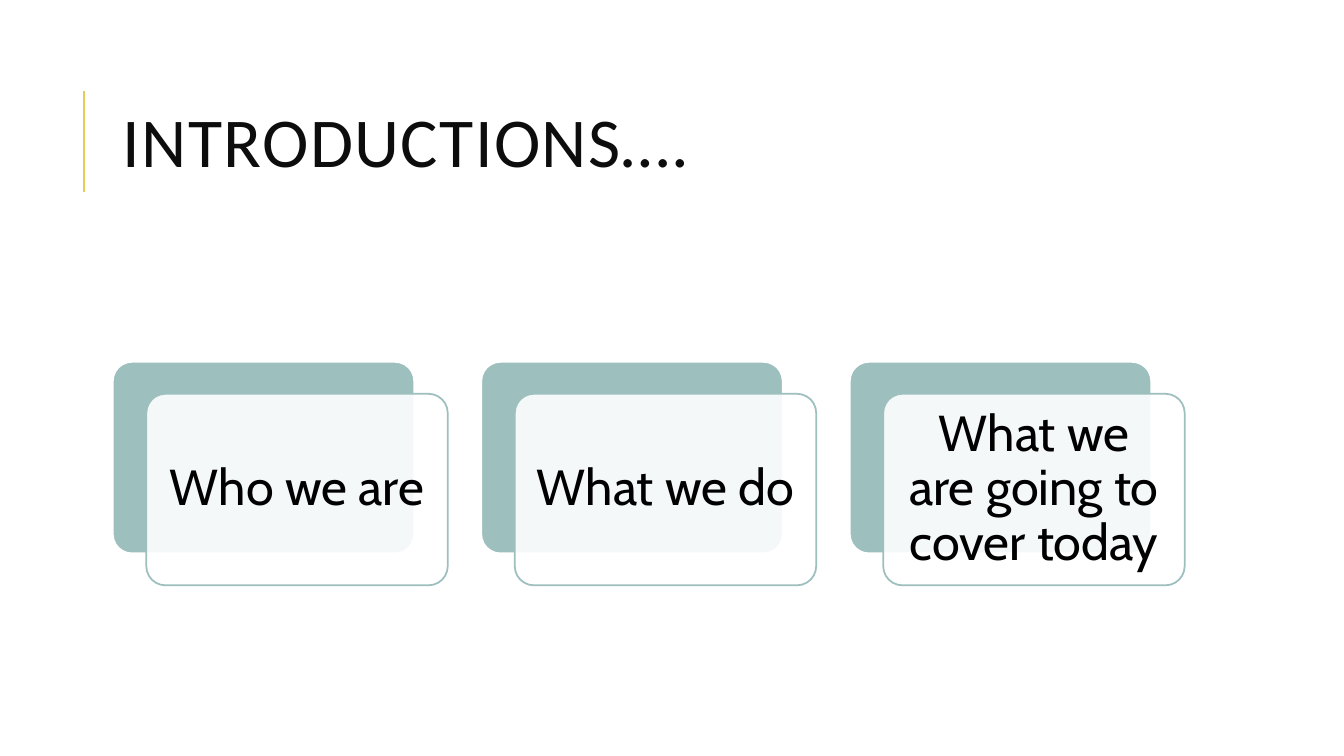
from dataclasses import dataclass

from lxml.etree import SubElement
from pptx import Presentation
from pptx.dml.color import RGBColor
from pptx.enum.shapes import MSO_CONNECTOR, MSO_SHAPE
from pptx.enum.text import MSO_ANCHOR, PP_ALIGN
from pptx.oxml.ns import qn
from pptx.shapes.autoshape import Shape
from pptx.slide import Slide
from pptx.util import Pt


@dataclass(frozen=True)
class Theme:
    white: RGBColor = RGBColor(0xFF, 0xFF, 0xFF)
    black: RGBColor = RGBColor(0x00, 0x00, 0x00)
    title_color: RGBColor = RGBColor(0x0D, 0x0D, 0x0D)
    gold: RGBColor = RGBColor(0xE3, 0xCC, 0x5A)
    teal: RGBColor = RGBColor(0x9D, 0xBF, 0xBE)
    title_font: str = "Calibri"
    card_font: str = "Cabin"
    title_size: float = 50
    card_size: float = 36


@dataclass(frozen=True)
class Card:
    text: str
    left: float


THEME = Theme()
CARD_TOP = 258.5
CARD_WIDTH = 215.3
CARD_HEIGHT = 136.8
FRONT_SHIFT_X = 23.9
FRONT_SHIFT_Y = 22.8
FIRST_LEFT = 80.6
CARD_STEP = 263.2
TOPICS = ("Who we are", "What we do", "What we are going to cover today")
CARDS = [Card(text, FIRST_LEFT + index * CARD_STEP) for index, text in enumerate(TOPICS)]


def write_text(shape: Shape, text: str, font_name: str, size: float,
               color: RGBColor, alignment: PP_ALIGN, line_spacing: float,
               letter_spacing: float = 0) -> None:
    frame = shape.text_frame
    frame.word_wrap = True
    frame.vertical_anchor = MSO_ANCHOR.MIDDLE
    paragraph = frame.paragraphs[0]
    paragraph.alignment = alignment
    paragraph.line_spacing = line_spacing
    run = paragraph.add_run()
    run.text = text
    run.font.name = font_name
    run.font.size = Pt(size)
    run.font.color.rgb = color
    if letter_spacing:
        run.font._element.set("spc", str(round(letter_spacing * 100)))


def add_title(slide: Slide) -> None:
    rule = slide.shapes.add_connector(
        MSO_CONNECTOR.STRAIGHT, Pt(60), Pt(136.8), Pt(60), Pt(64.8))
    rule.line.color.rgb = THEME.gold
    rule.line.width = Pt(1.5)
    SubElement(rule._element.spPr, qn("a:effectLst"))
    title = slide.shapes.add_textbox(Pt(80.6), Pt(46.1), Pt(765.4), Pt(118.1))
    write_text(title, "INTRODUCTIONS….", THEME.title_font, THEME.title_size,
               THEME.title_color, PP_ALIGN.LEFT, 0.8, letter_spacing=1)


def add_panel(slide: Slide, left: float, top: float,
              fill: RGBColor, outline: RGBColor) -> Shape:
    panel = slide.shapes.add_shape(
        MSO_SHAPE.ROUNDED_RECTANGLE, Pt(left), Pt(top), Pt(CARD_WIDTH), Pt(CARD_HEIGHT))
    panel.adjustments[0] = 0.1
    panel.shadow.inherit = False
    panel.fill.solid()
    panel.fill.fore_color.rgb = fill
    panel.line.color.rgb = outline
    panel.line.width = Pt(1.25)
    return panel


def set_opacity(shape: Shape, percent: int) -> None:
    color = shape._element.spPr.find(qn("a:solidFill")).find(qn("a:srgbClr"))
    SubElement(color, qn("a:alpha")).set("val", str(percent * 1000))


def add_card(slide: Slide, card: Card) -> None:
    """Draw a teal panel with a translucent captioned panel shifted over it."""
    add_panel(slide, card.left, CARD_TOP, THEME.teal, THEME.white)
    front = add_panel(slide, card.left + FRONT_SHIFT_X, CARD_TOP + FRONT_SHIFT_Y,
                      THEME.white, THEME.teal)
    set_opacity(front, 90)
    frame = front.text_frame
    frame.margin_left = frame.margin_right = Pt(10.8)
    frame.margin_top = frame.margin_bottom = Pt(10.8)
    write_text(front, card.text, THEME.card_font, THEME.card_size,
               THEME.black, PP_ALIGN.CENTER, 0.9)


def main() -> None:
    presentation = Presentation()
    presentation.slide_width = Pt(960)
    presentation.slide_height = Pt(540)
    slide = presentation.slides.add_slide(presentation.slide_layouts[6])
    slide.background.fill.solid()
    slide.background.fill.fore_color.rgb = THEME.white
    add_title(slide)
    for card in CARDS:
        add_card(slide, card)
    presentation.save("out.pptx")


if __name__ == "__main__":
    main()
